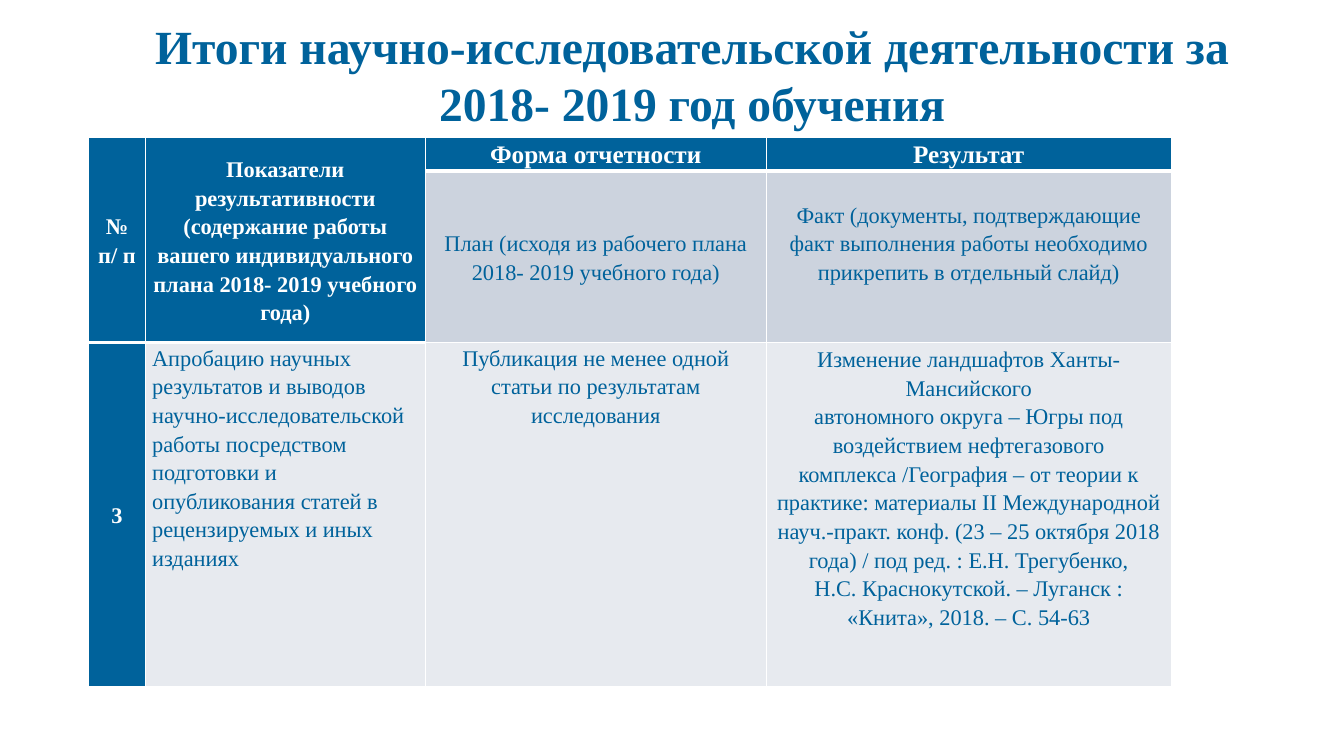
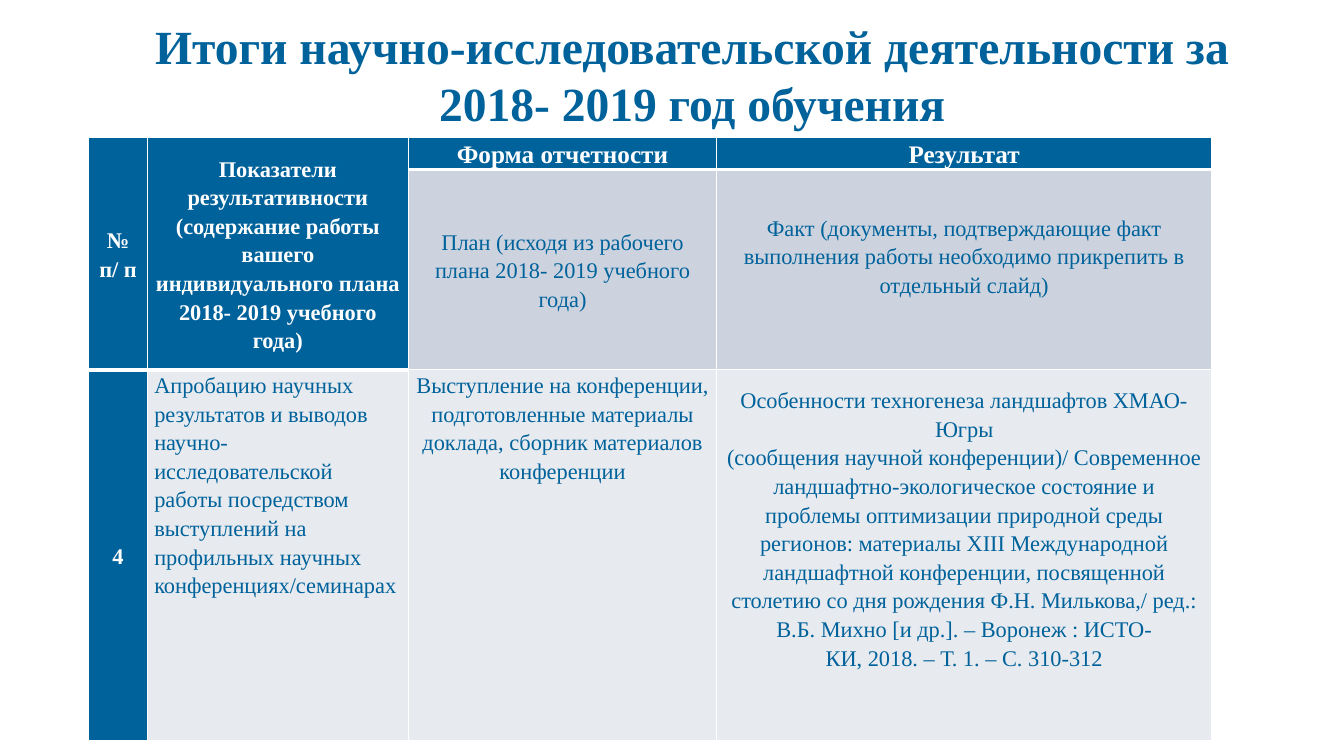
"""Build two slides reporting the research results of the 2018-2019 study year."""
from lxml.etree import SubElement
from pptx import Presentation
from pptx.dml.color import RGBColor
from pptx.enum.text import MSO_ANCHOR, MSO_AUTO_SIZE, PP_ALIGN
from pptx.oxml.ns import qn
from pptx.util import Pt

BLUE = RGBColor(0x00, 0x62, 0x9B)
WHITE = RGBColor(0xFF, 0xFF, 0xFF)
GREY = RGBColor(0xCC, 0xD3, 0xDE)
PALE = RGBColor(0xE7, 0xEA, 0xEF)
FONT = "Times New Roman"
TITLE = "Итоги научно-исследовательской деятельности за 2018- 2019 год обучения"
HEADER = [
    ["№ п/ п"],
    [
        "Показатели результативности",
        "(содержание работы вашего индивидуального плана 2018- 2019 учебного года)",
    ],
    ["Форма отчетности"],
    ["Результат"],
]
SUBHEADER = [
    [],
    [],
    ["План (исходя из рабочего плана 2018- 2019 учебного года)"],
    ["Факт (документы, подтверждающие факт выполнения работы необходимо прикрепить в отдельный слайд)"],
]
REPORTS = [
    {
        "widths": [40.3, 200.2, 243.4, 289.4],
        "heights": [24, 122.5, 245.5],
        "row": [
            ["3"],
            ["Апробацию научных результатов и выводов научно-исследовательской работы посредством подготовки и опубликования статей в рецензируемых и иных изданиях"],
            ["Публикация не менее одной статьи по результатам исследования"],
            [
                "Изменение ландшафтов Ханты-Мансийского",
                "автономного округа – Югры под воздействием нефтегазового комплекса /География – от теории к практике: материалы ІІ Международной",
                "науч.-практ. конф. (23 – 25 октября 2018 года) / под ред. : Е.Н. Трегубенко,",
                "Н.С. Краснокутской. – Луганск : «Книта», 2018. – С. 54-63",
            ],
        ],
    },
    {
        "widths": [41.8, 186.5, 220.3, 353.5],
        "heights": [23, 143, 265],
        "row": [
            ["4"],
            ["Апробацию научных результатов и выводов научно-исследовательской работы посредством выступлений на профильных научных конференциях/семинарах"],
            ["Выступление на конференции, подготовленные материалы доклада, сборник материалов конференции"],
            [
                "Особенности техногенеза ландшафтов ХМАО-Югры",
                "(сообщения научной конференции)/ Современное ландшафтно-экологическое состояние и проблемы оптимизации природной среды регионов: материалы XIII Международной ландшафтной конференции, посвященной столетию со дня рождения Ф.Н. Милькова,/ ред.: В.Б. Михно [и др.]. – Воронеж : ИСТО-",
                "КИ, 2018. – Т. 1. – С. 310-312",
            ],
        ],
    },
]
BOTTOM_MARGINS = {(1, 3): 20.4, (2, 3): 39}
TOP_ANCHORED = {(0, 2), (0, 3), (2, 1), (2, 2)}


def add_text(paragraph, text, size, color, bold):
    run = paragraph.add_run()
    run.text = text
    run.font.name = FONT
    run.font.size = Pt(size)
    run.font.bold = bold
    run.font.color.rgb = color


def set_borders(cell, bottom_width):
    properties = cell._tc.get_or_add_tcPr()
    for side, width in (("L", 1), ("R", 1), ("T", 1), ("B", bottom_width)):
        line = SubElement(properties, qn(f"a:ln{side}"), w=str(Pt(width)))
        fill = SubElement(line, qn("a:solidFill"))
        SubElement(fill, qn("a:srgbClr"), val=str(WHITE))


presentation = Presentation()
presentation.slide_width = Pt(960)
presentation.slide_height = Pt(540)

for report in REPORTS:
    slide = presentation.slides.add_slide(presentation.slide_layouts[5])
    title = slide.shapes.title
    title.left, title.top, title.width, title.height = Pt(62.6), Pt(20.2), Pt(864), Pt(64.8)
    frame = title.text_frame
    frame.word_wrap = True
    frame.auto_size = MSO_AUTO_SIZE.NONE
    frame.vertical_anchor = MSO_ANCHOR.MIDDLE
    frame.paragraphs[0].alignment = PP_ALIGN.CENTER
    add_text(frame.paragraphs[0], TITLE, 34, BLUE, True)

    widths, heights = report["widths"], report["heights"]
    table = slide.shapes.add_table(
        len(heights), len(widths), Pt(63.4), Pt(98), Pt(sum(widths)), Pt(sum(heights))
    ).table
    for column, width in zip(table.columns, widths):
        column.width = Pt(width)
    for row, height in zip(table.rows, heights):
        row.height = Pt(height)
    for column_index in (0, 1):
        table.cell(0, column_index).merge(table.cell(1, column_index))

    for row_index, contents in enumerate([HEADER, SUBHEADER, report["row"]]):
        for column_index, texts in enumerate(contents):
            position = (row_index, column_index)
            cell = table.cell(*position)
            is_header = row_index == 0 or column_index == 0
            in_header_block = row_index == 0 or (row_index == 1 and column_index < 2)
            set_borders(cell, 3 if in_header_block else 1)
            cell.fill.solid()
            if is_header or in_header_block:
                cell.fill.fore_color.rgb = BLUE
            else:
                cell.fill.fore_color.rgb = GREY if row_index == 1 else PALE
            cell.margin_left = cell.margin_right = Pt(5)
            cell.margin_top = Pt(0)
            cell.margin_bottom = Pt(BOTTOM_MARGINS.get(position, 0))
            cell.vertical_anchor = MSO_ANCHOR.TOP if position in TOP_ANCHORED else MSO_ANCHOR.MIDDLE
            size = 18 if row_index == 0 and column_index > 1 else 16
            for text_index, text in enumerate(texts):
                frame = cell.text_frame
                paragraph = frame.add_paragraph() if text_index else frame.paragraphs[0]
                paragraph.alignment = PP_ALIGN.LEFT if position == (2, 1) else PP_ALIGN.CENTER
                paragraph.line_spacing = 1.15
                add_text(paragraph, text, size, WHITE if is_header else BLUE, is_header)

presentation.save("out.pptx")
